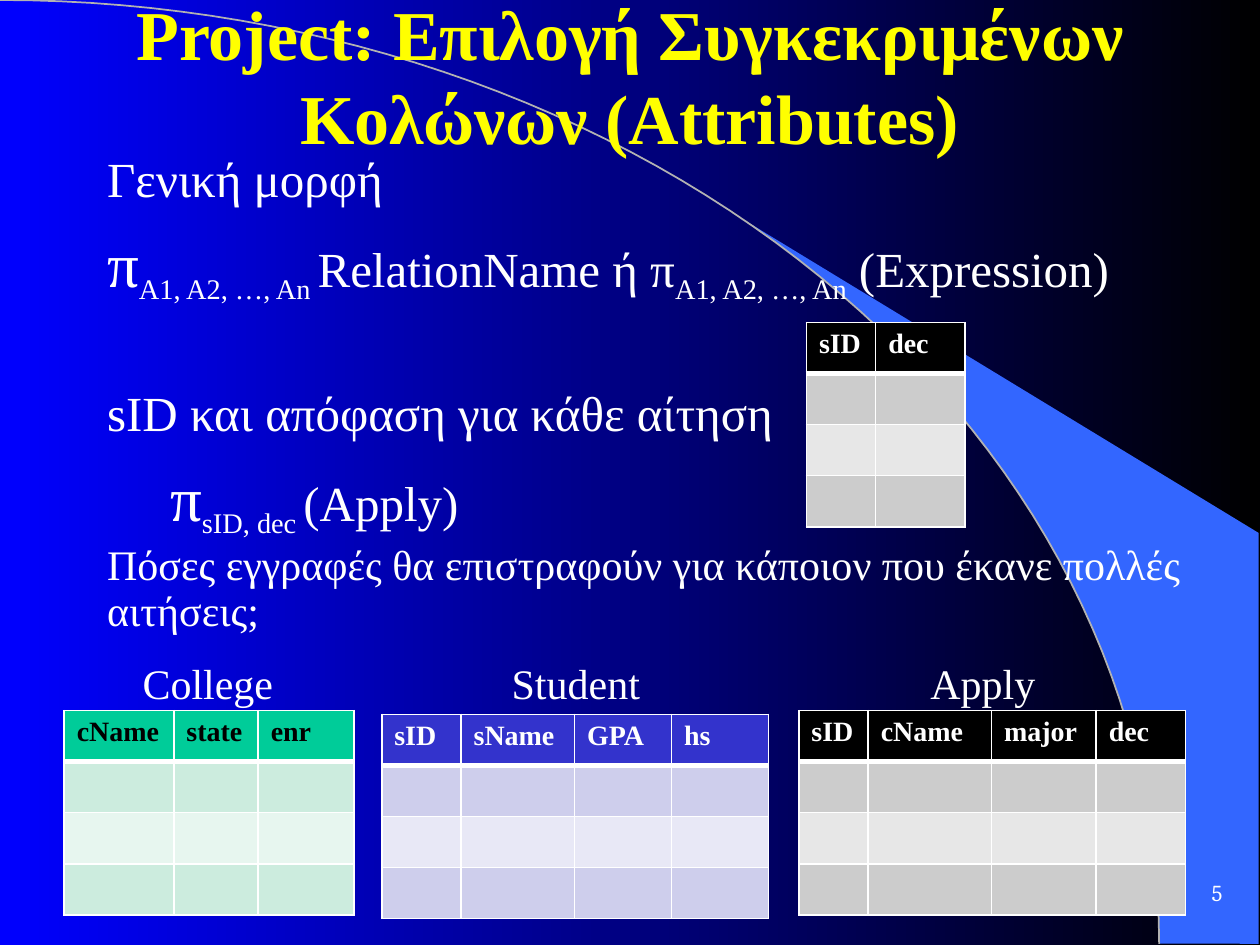
import math

from lxml import etree
from pptx import Presentation
from pptx.dml.color import RGBColor
from pptx.enum.text import MSO_ANCHOR, MSO_AUTO_SIZE, PP_ALIGN
from pptx.oxml.ns import qn
from pptx.util import Inches, Pt

CENTER = PP_ALIGN.CENTER
RIGHT = PP_ALIGN.RIGHT
MIDDLE = MSO_ANCHOR.MIDDLE
TOP = MSO_ANCHOR.TOP
NO_AUTOFIT = MSO_AUTO_SIZE.NONE

SERIF = "Times New Roman"
NUMBER_FONT = "Cambria"
COLORS = {
    "white": "FFFFFF", "black": "000000", "yellow": "FFFF00",
    "blue": "0000FF", "wedge": "3366FF", "arc": "B2B2B2",
    "green": "00CC99", "green_dark": "CCECDE", "green_light": "E7F6EF",
    "violet": "3333CC", "violet_dark": "CECEEC", "violet_light": "E8E8F6",
    "gray_dark": "CCCCCC", "gray_light": "E7E7E7",
}
GREEN = ("green", "black", "green_dark", "green_light")
VIOLET = ("violet", "white", "violet_dark", "violet_light")
BLACK = ("black", "white", "gray_dark", "gray_light")

ARC_WIDTH, ARC_HEIGHT = 9.2, 7.49
WEDGE_LEFT = 5.89
ROW_COUNT, ROW_HEIGHT = 4, 0.405

TABLES = [
    (0.51, 5.64, ["cName", "state", "enr"], [0.87, 0.67, 0.76], GREEN),
    (3.03, 5.67, ["sID", "sName", "GPA", "hs"], [0.63, 0.9, 0.77, 0.77], VIOLET),
    (6.34, 5.64, ["sID", "cName", "major", "dec"], [0.55, 0.98, 0.83, 0.71], BLACK),
    (6.4, 2.56, ["sID", "dec"], [0.55, 0.71], BLACK),
]
LABELS = [("College", 0.9), ("Student", 3.82), ("Apply", 7.05)]

ATTRIBUTES = ("Α1, Α2, …, Αn", 28, True)
BODY = [
    (0, 0, 0, [("Γενική μορφή", 28, False)]),
    (1, 0, 12, [("π", 36, False), ("Α1, Α2, …, Αn ", 28, True),
                ("RelationName ή π", 28, False), ATTRIBUTES,
                (" (Expression)", 28, False)]),
    (0, 0, 50, [("sID και απόφαση για κάθε αίτηση", 28, False)]),
    (1, 0.5, 12, [("π", 36, False), ("sID, dec ", 28, True), ("(Apply)", 28, False)]),
    (1, 0, 5, [("Πόσες εγγραφές θα επιστραφούν για κάποιον που έκανε "
                "πολλές αιτήσεις;", 24, False)]),
]


def color(name):
    return RGBColor.from_string(COLORS[name])


def style_font(font, size, color_name, bold=False, name=SERIF):
    font.name = name
    font.size = Pt(size)
    font.bold = bold
    font.color.rgb = color(color_name)


def place(shape, left, top, width, height):
    shape.left, shape.top = Inches(left), Inches(top)
    shape.width, shape.height = Inches(width), Inches(height)


def set_background(slide):
    fill = slide.background.fill
    fill.gradient()
    fill.gradient_angle = 0
    for stop, name, position in zip(fill.gradient_stops, ("blue", "black"), (0, 1)):
        stop.color.rgb = color(name)
        stop.position = position


def arc_points(start, steps=60):
    end = math.pi / 2
    angles = [start + (end - start) * step / steps for step in range(steps + 1)]
    return [(ARC_WIDTH * math.sin(angle), ARC_HEIGHT * (1 - math.cos(angle)))
            for angle in angles]


def add_outline(slide, points, close):
    points = [(Inches(x), Inches(y)) for x, y in points]
    builder = slide.shapes.build_freeform(*points[0])
    builder.add_line_segments(points[1:], close=close)
    shape = builder.convert_to_shape()
    shape.shadow.inherit = False
    slide.shapes._spTree.insert(2, shape._element)
    return shape


def add_decoration(slide):
    arc = add_outline(slide, arc_points(0), close=False)
    arc.fill.background()
    arc.line.color.rgb = color("arc")
    arc.line.width = Pt(1)

    corners = [(9.99, ARC_HEIGHT), (9.99, 4.23)]
    start = math.asin(WEDGE_LEFT / ARC_WIDTH)
    wedge = add_outline(slide, arc_points(start) + corners, close=True)
    wedge.fill.solid()
    wedge.fill.fore_color.rgb = color("wedge")
    wedge.line.fill.background()


def fill_title(title):
    place(title, 0.75, -0.03, 8.5, 1.25)
    text_frame = title.text_frame
    text_frame.text = "Project: Επιλογή Συγκεκριμένων Κολώνων (Attributes)"
    text_frame.auto_size = NO_AUTOFIT
    text_frame.vertical_anchor = MIDDLE
    paragraph = text_frame.paragraphs[0]
    paragraph.alignment = CENTER
    style_font(paragraph.runs[0].font, 40, "yellow", bold=True)


def fill_body(body):
    place(body, 0.75, 1.18, 8.98, 3.01)
    text_frame = body.text_frame
    text_frame.auto_size = NO_AUTOFIT
    text_frame.vertical_anchor = TOP
    for index, (level, indent, space_before, runs) in enumerate(BODY):
        paragraph = text_frame.add_paragraph() if index else text_frame.paragraphs[0]
        properties = paragraph._p.get_or_add_pPr()
        properties.set("marL", str(Inches(indent)))
        properties.set("indent", "0")
        etree.SubElement(properties, qn("a:buNone"))
        paragraph.level = level
        paragraph.line_spacing = 0.9
        paragraph.space_before = Pt(space_before)
        for text, size, subscript in runs:
            run = paragraph.add_run()
            run.text = text
            style_font(run.font, size, "white")
            if subscript:
                run.font._element.set("baseline", "-25000")


def set_borders(cell, bottom_width):
    properties = cell._tc.get_or_add_tcPr()
    for side, width in (("L", 1), ("R", 1), ("T", 1), ("B", bottom_width)):
        line = etree.SubElement(properties, qn("a:ln" + side), w=str(Pt(width)))
        solid = etree.SubElement(line, qn("a:solidFill"))
        etree.SubElement(solid, qn("a:srgbClr"), val=COLORS["white"])


def add_relation(slide, left, top, headers, widths, palette):
    header_fill, header_text, dark, light = palette
    frame = slide.shapes.add_table(
        ROW_COUNT, len(headers), Inches(left), Inches(top),
        Inches(sum(widths)), Inches(ROW_COUNT * ROW_HEIGHT))
    table = frame.table
    for column, width in zip(table.columns, widths):
        column.width = Inches(width)
    for row_index, fill_name in enumerate((header_fill, dark, light, dark)):
        for cell in table.rows[row_index].cells:
            set_borders(cell, 1 if row_index else 3)
            cell.fill.solid()
            cell.fill.fore_color.rgb = color(fill_name)
    for cell, header in zip(table.rows[0].cells, headers):
        cell.text = header
        run = cell.text_frame.paragraphs[0].runs[0]
        style_font(run.font, 16, header_text, bold=True)


def add_label(slide, text, left):
    box = slide.shapes.add_textbox(Inches(left), Inches(5.17), Inches(1.5), Inches(0.51))
    box.text_frame.word_wrap = True
    box.text_frame.text = text
    paragraph = box.text_frame.paragraphs[0]
    paragraph.alignment = CENTER
    style_font(paragraph.runs[0].font, 24, "white")


def add_slide_number(slide):
    box = slide.shapes.add_textbox(Inches(9.24), Inches(6.83), Inches(0.56), Inches(0.5))
    box.text_frame.word_wrap = False
    box.text_frame.vertical_anchor = MIDDLE
    box.text_frame.text = "5"
    paragraph = box.text_frame.paragraphs[0]
    paragraph.alignment = RIGHT
    style_font(paragraph.runs[0].font, 13, "white", name=NUMBER_FONT)


def main():
    presentation = Presentation()
    presentation.slide_width, presentation.slide_height = Inches(10), Inches(7.5)
    slide = presentation.slides.add_slide(presentation.slide_layouts[1])
    set_background(slide)
    add_decoration(slide)
    fill_title(slide.shapes.title)
    fill_body(slide.placeholders[1])
    for relation in TABLES:
        add_relation(slide, *relation)
    for text, left in LABELS:
        add_label(slide, text, left)
    add_slide_number(slide)
    presentation.save("out.pptx")


if __name__ == "__main__":
    main()
